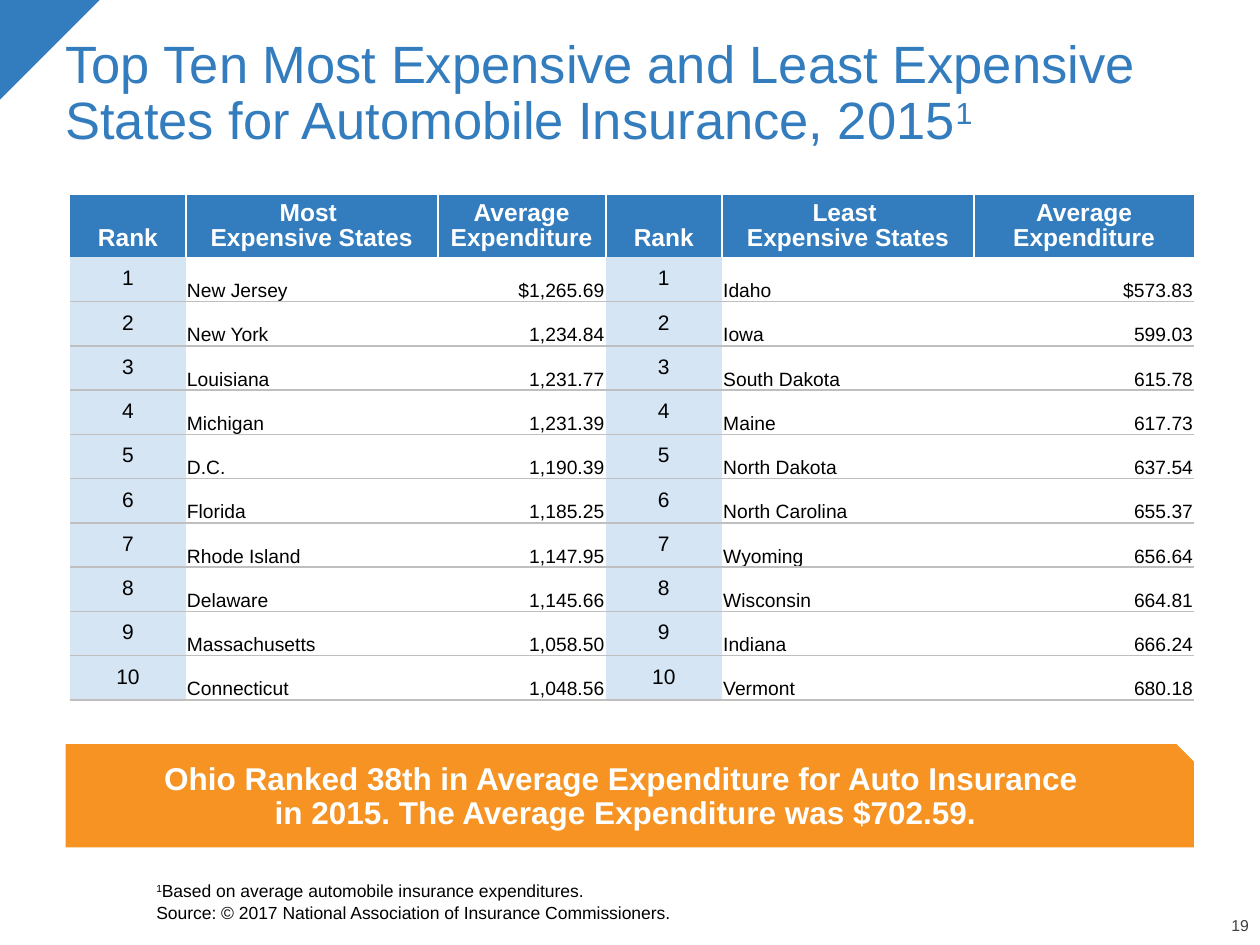
"""Build the slide on the most and least expensive states for automobile insurance."""
from dataclasses import dataclass

from lxml import etree
from pptx import Presentation
from pptx.dml.color import RGBColor
from pptx.enum import shapes, text
from pptx.oxml import ns
from pptx.util import Pt

LEFT, CENTER, RIGHT = text.PP_ALIGN.LEFT, text.PP_ALIGN.CENTER, text.PP_ALIGN.RIGHT
TOP, MIDDLE, BOTTOM = text.MSO_ANCHOR.TOP, text.MSO_ANCHOR.MIDDLE, text.MSO_ANCHOR.BOTTOM


@dataclass(frozen=True)
class Theme:
    """Colours, font and type sizes of the slide."""
    font: str = "Arial"
    blue: str = "337DBE"
    pale_blue: str = "D5E5F4"
    orange: str = "F69322"
    rule: str = "BFBFBF"
    white: str = "FFFFFF"
    black: str = "000000"
    gray: str = "404040"
    title: float = 30
    callout: float = 18
    header: float = 14
    rank: float = 12
    cell: float = 11
    note: float = 10
    number: float = 9


THEME = Theme()
NO_TABLE_STYLE = "{2D5ABB26-0587-4C30-8999-92F81FD0307C}"
COLUMN_WIDTHS = (66, 144, 96, 66.5, 144, 125.9)
HEADERS = ("Rank", "Most \nExpensive States", "Average Expenditure",
           "Rank", "Least \nExpensive States", "Average Expenditure")
MOST = (("New Jersey", "$1,265.69"), ("New York", "1,234.84"), ("Louisiana", "1,231.77"),
        ("Michigan", "1,231.39"), ("D.C.", "1,190.39"), ("Florida", "1,185.25"),
        ("Rhode Island", "1,147.95"), ("Delaware", "1,145.66"),
        ("Massachusetts", "1,058.50"), ("Connecticut", "1,048.56"))
LEAST = (("Idaho", "$573.83"), ("Iowa", "599.03"), ("South Dakota", "615.78"),
         ("Maine", "617.73"), ("North Dakota", "637.54"), ("North Carolina", "655.37"),
         ("Wyoming", "656.64"), ("Wisconsin", "664.81"),
         ("Indiana", "666.24"), ("Vermont", "680.18"))


def apply(target, values):
    """Set each attribute named in values on the target."""
    for name, value in values.items():
        setattr(target, name, value)


def place(shape, box):
    """Move a shape to a box of left, top, width and height in points."""
    apply(shape, dict(zip(("left", "top", "width", "height"), map(Pt, box))))


def set_frame(frame, anchor, margins=(7.2, 3.6, 7.2, 3.6)):
    """Set the anchor, wrapping and margins of a text frame."""
    names = ("margin_left", "margin_top", "margin_right", "margin_bottom")
    apply(frame, {"word_wrap": True, "auto_size": text.MSO_AUTO_SIZE.NONE,
                  "vertical_anchor": anchor, **dict(zip(names, map(Pt, margins)))})


def write(paragraph, content, size, color, bold=False, align=LEFT, spacing=0.9,
          before=0, raised=False):
    """Append formatted text, with line breaks, to a paragraph."""
    apply(paragraph, {"alignment": align, "line_spacing": spacing,
                      "space_before": Pt(before)})
    for index, line in enumerate(content.split("\n")):
        if index:
            paragraph.add_line_break()
            line_break = paragraph._p.findall(ns.qn("a:br"))[-1]
            etree.SubElement(line_break, ns.qn("a:rPr"), sz=str(int(size * 100)))
        run = paragraph.add_run()
        run.text = line
        apply(run.font, {"name": THEME.font, "size": Pt(size), "bold": bold})
        run.font.color.rgb = RGBColor.from_string(color)
        if raised:
            run._r.get_or_add_rPr().set("baseline", "30000")


def add_block(slide, kind, box, color):
    """Add a plain filled preset shape."""
    block = slide.shapes.add_shape(kind, *map(Pt, box))
    block.shadow.inherit = False
    block.fill.solid()
    block.fill.fore_color.rgb = RGBColor.from_string(color)
    block.line.fill.background()
    return block


def add_corner(slide, box):
    """Place the corner triangle behind everything else."""
    corner = add_block(slide, shapes.MSO_SHAPE.RIGHT_TRIANGLE, box, THEME.blue)
    corner.rotation = 90
    slide.shapes._spTree.insert(2, corner._element)


def fill_title(slide, box):
    """Place and fill the title."""
    title = slide.shapes.title
    place(title, box)
    set_frame(title.text_frame, TOP)
    paragraph = title.text_frame.paragraphs[0]
    write(paragraph, "Top Ten Most Expensive and Least Expensive States for "
          "Automobile Insurance, 2015", THEME.title, THEME.blue)
    write(paragraph, "1", THEME.title, THEME.blue, raised=True)


def fill_notes(slide, box):
    """Place the footnote and source in the body placeholder."""
    body = slide.placeholders[1]
    place(body, box)
    frame = body.text_frame
    set_frame(frame, BOTTOM, (0, 0, 0, 0))
    note, source = frame.paragraphs[0], frame.add_paragraph()
    for paragraph in (note, source):
        properties = paragraph._p.get_or_add_pPr()
        properties.attrib.update({"marL": "0", "indent": "0"})
        etree.SubElement(properties, ns.qn("a:buNone"))
    write(note, "1", THEME.note, THEME.black, raised=True)
    write(note, "Based on average automobile insurance expenditures.",
          THEME.note, THEME.black)
    write(source, "Source: © 2017 National Association of Insurance Commissioners.",
          THEME.note, THEME.black, before=2)


def set_border(cell, side, color, width):
    """Draw one border of a table cell."""
    line = etree.SubElement(cell._tc.get_or_add_tcPr(), ns.qn(f"a:ln{side}"),
                            w=str(int(Pt(width))))
    fill = etree.SubElement(line, ns.qn("a:solidFill"))
    etree.SubElement(fill, ns.qn("a:srgbClr"), val=color)


def fill_cell(cell, content, row, column):
    """Format a cell as header, rank, state or amount by its position."""
    kind = column % 3
    if row == 0:
        color, anchor, margin = THEME.blue, BOTTOM, None
        style = {"size": THEME.header, "color": THEME.white, "bold": True, "align": CENTER}
        for side, drawn in (("L", column > 0), ("R", column < len(HEADERS) - 1)):
            if drawn:
                set_border(cell, side, THEME.white, 1.5)
    else:
        set_border(cell, "B", THEME.rule, 1)
        if kind == 0:
            color, anchor, margin = THEME.pale_blue, MIDDLE, None
            style = {"size": THEME.rank, "color": THEME.black, "align": CENTER}
        else:
            color, anchor, margin = None, BOTTOM, Pt(0.72)
            style = {"size": THEME.cell, "color": THEME.black, "spacing": 1,
                     "align": LEFT if kind == 1 else RIGHT}
    if color:
        cell.fill.solid()
        cell.fill.fore_color.rgb = RGBColor.from_string(color)
    else:
        cell.fill.background()
    cell.vertical_anchor = anchor
    if margin is not None:
        apply(cell, {"margin_left": margin, "margin_top": margin,
                     "margin_right": margin, "margin_bottom": 0})
    write(cell.text_frame.paragraphs[0], content, **style)


def add_ranking(slide, box, header_height=35.4):
    """Add the table that sets both rankings side by side."""
    rows = [HEADERS] + [(str(rank), *most, str(rank), *least)
                        for rank, (most, least) in enumerate(zip(MOST, LEAST), 1)]
    table = slide.shapes.add_table(len(rows), len(HEADERS), *map(Pt, box)).table
    apply(table, {"first_row": False, "horz_banding": False})
    table._tbl.tblPr.find(ns.qn("a:tableStyleId")).text = NO_TABLE_STYLE
    for column, width in zip(table.columns, COLUMN_WIDTHS):
        column.width = Pt(width)
    row_height = (box[3] - header_height) / (len(rows) - 1)
    for row, contents in enumerate(rows):
        table.rows[row].height = Pt(row_height if row else header_height)
        for column, content in enumerate(contents):
            fill_cell(table.cell(row, column), content, row, column)


def add_callout(slide, box):
    """Add the banner with Ohio's rank."""
    callout = add_block(slide, shapes.MSO_SHAPE.SNIP_1_RECTANGLE, box, THEME.orange)
    set_frame(callout.text_frame, MIDDLE, (7.2, 3.6, 7.2, 7.2))
    write(callout.text_frame.paragraphs[0],
          "Ohio Ranked 38th in Average Expenditure for Auto Insurance \n"
          "in 2015. The Average Expenditure was $702.59.",
          THEME.callout, THEME.white, bold=True, align=CENTER)


def add_page_number(slide, box):
    """Add the page number."""
    frame = slide.shapes.add_textbox(*map(Pt, box)).text_frame
    set_frame(frame, BOTTOM, (0, 0, 0, 0))
    write(frame.paragraphs[0], "19", THEME.number, THEME.gray, align=RIGHT)


presentation = Presentation()
apply(presentation, {"slide_width": Pt(720), "slide_height": Pt(540)})
main_slide = presentation.slides.add_slide(presentation.slide_layouts[1])
add_corner(main_slide, (-0.5, 0, 57.5, 57.5))
fill_title(main_slide, (30.2, 18, 666, 75))
fill_notes(main_slide, (89.3, 495.4, 604.8, 32.4))
add_ranking(main_slide, (40.1, 111.5, sum(COLUMN_WIDTHS), 288.4))
add_callout(main_slide, (37.6, 425.3, 644.6, 58.9))
add_page_number(main_slide, (679, 524.9, 34.6, 9.4))
presentation.save("out.pptx")
